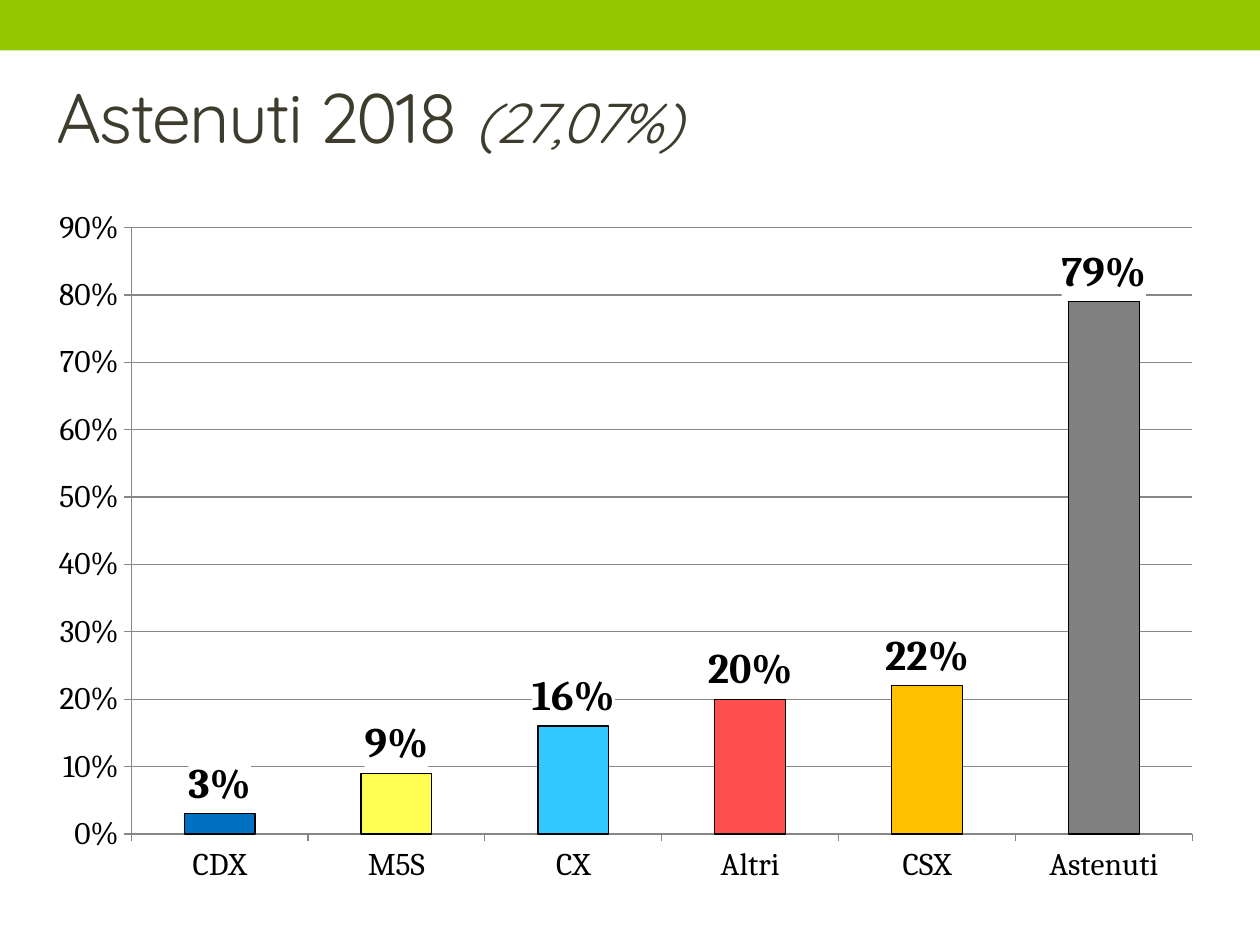
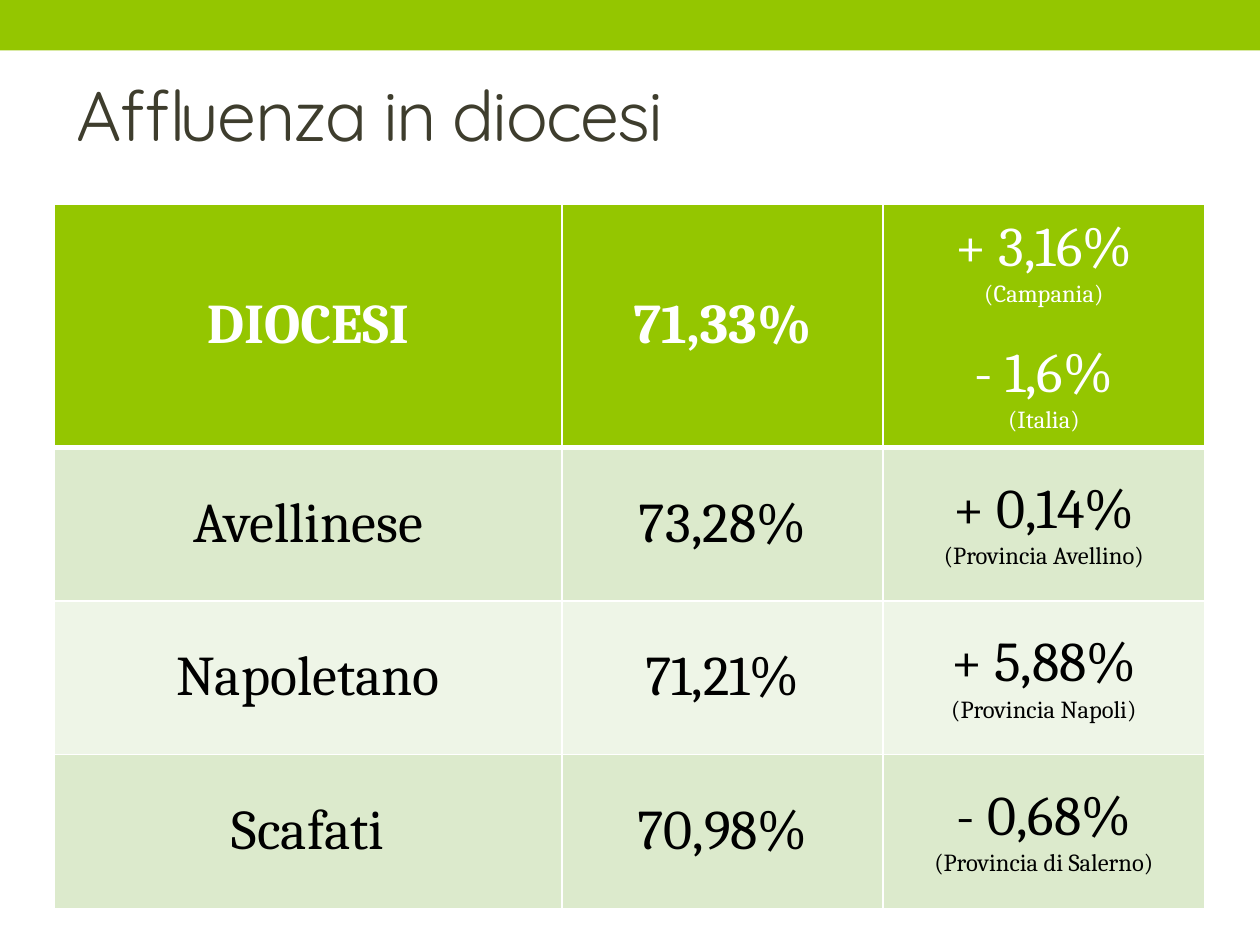
from dataclasses import dataclass

from lxml.etree import SubElement
from pptx import Presentation
from pptx.chart.data import CategoryChartData
from pptx.dml.color import RGBColor
from pptx.enum.chart import XL_CHART_TYPE as ChartType
from pptx.enum.chart import XL_LABEL_POSITION as LabelPosition
from pptx.enum.chart import XL_TICK_MARK as TickMark
from pptx.enum.shapes import MSO_SHAPE as Preset
from pptx.enum.text import MSO_ANCHOR as Anchor
from pptx.enum.text import PP_ALIGN as Align
from pptx.oxml import parse_xml
from pptx.oxml.ns import nsdecls, qn
from pptx.util import Pt

COLOURS = {
    "green": "94C600", "olive": "3E3D2D", "white": "FFFFFF", "black": "000000",
    "grid": "878787", "band_dark": "DCEACC", "band_light": "EEF5E7",
    "CDX": "0070C0", "M5S": "FFFF53", "CX": "2FC9FF",
    "Altri": "FF4F4F", "CSX": "FFC000", "Astenuti": "808080",
}
TITLE_FONT, BODY_FONT = "Quicksand", "Cambria"
SLIDE_WIDTH, SLIDE_HEIGHT, BAND_HEIGHT = 720, 540, 28.8


@dataclass(frozen=True)
class Box:
    left: float
    top: float
    width: float
    height: float

    def lengths(self) -> tuple:
        return Pt(self.left), Pt(self.top), Pt(self.width), Pt(self.height)


@dataclass(frozen=True)
class Change:
    """Difference in turnout against a reference area."""
    amount: str
    area: str


@dataclass(frozen=True)
class Turnout:
    place: str
    share: str
    changes: tuple[Change, ...]
    fill: str
    height: float = 87.84
    ink: str = "black"
    bold: bool = False


SHARES = {"CDX": 0.03, "M5S": 0.09, "CX": 0.16, "Altri": 0.2, "CSX": 0.22, "Astenuti": 0.79}
TURNOUTS = [
    Turnout("DIOCESI", "71,33%", (Change("+ 3,16%", "(Campania)"), Change("- 1,6%", "(Italia)")),
            "green", height=138.96, ink="white", bold=True),
    Turnout("Avellinese", "73,28%", (Change("+ 0,14%", "(Provincia Avellino)"),), "band_dark"),
    Turnout("Napoletano", "71,21%", (Change("+ 5,88%", "(Provincia Napoli)"),), "band_light"),
    Turnout("Scafati", "70,98%", (Change("- 0,68%", "(Provincia di Salerno)"),), "band_dark"),
]
COLUMN_WIDTHS = (290.16, 183.6, 183.6)


def rgb(name: str) -> RGBColor:
    return RGBColor.from_string(COLOURS[name])


def style_font(font, size: float, colour: str = "black", name: str = BODY_FONT,
               bold: bool = False, italic: bool = False) -> None:
    font.size, font.name, font.bold, font.italic = Pt(size), name, bold, italic
    font.color.rgb = rgb(colour)


def write(paragraph, text: str, *, spacing: float = 0, **style) -> None:
    """Append a run; spacing is the tracking in points."""
    run = paragraph.add_run()
    run.text = text
    style_font(run.font, **style)
    if spacing:
        run.font._element.set("spc", str(round(spacing * 100)))


def add_slide(deck, title_box: Box, title: str, detail: str = ""):
    """Start a slide with the green band and the title."""
    slide = deck.slides.add_slide(deck.slide_layouts[6])
    band = slide.shapes.add_shape(Preset.RECTANGLE, *Box(0, 0, SLIDE_WIDTH, BAND_HEIGHT).lengths())
    band.shadow.inherit = False
    band.fill.solid()
    band.fill.fore_color.rgb = rgb("green")
    band.line.fill.background()

    frame = slide.shapes.add_textbox(*title_box.lengths()).text_frame
    frame.word_wrap = True
    frame.vertical_anchor = Anchor.MIDDLE
    heading = {"name": TITLE_FONT, "colour": "olive", "spacing": -1}
    write(frame.paragraphs[0], title, size=40, **heading)
    if detail:
        write(frame.paragraphs[0], detail, size=32, italic=True, **heading)
    return slide


def style_axis(axis) -> None:
    axis.major_tick_mark, axis.minor_tick_mark = TickMark.OUTSIDE, TickMark.NONE
    axis.format.line.color.rgb = rgb("grid")
    axis.format.line.width = Pt(0.75)
    style_font(axis.tick_labels.font, 18)


def add_share_chart(slide, box: Box) -> None:
    data = CategoryChartData(number_format="0%")
    data.categories = list(SHARES)
    data.add_series("Series 1", list(SHARES.values()))
    chart = slide.shapes.add_chart(ChartType.COLUMN_CLUSTERED, *box.lengths(), data).chart
    chart.has_legend = chart.has_title = False
    style_font(chart.font, 18)

    shares_axis = chart.value_axis
    for axis in (chart.category_axis, shares_axis):
        style_axis(axis)
    shares_axis.minimum_scale, shares_axis.maximum_scale, shares_axis.major_unit = 0, 0.9, 0.1
    shares_axis.tick_labels.number_format = "0%"
    shares_axis.tick_labels.number_format_is_linked = False
    shares_axis.has_major_gridlines = True
    shares_axis.major_gridlines.format.line.color.rgb = rgb("grid")
    shares_axis.major_gridlines.format.line.width = Pt(0.75)

    plot = chart.plots[0]
    plot.gap_width, plot.vary_by_categories = 150, False
    columns = plot.series[0]
    for index, party in enumerate(SHARES):
        column = columns.points[index].format
        column.fill.solid()
        column.fill.fore_color.rgb = rgb(party)
        column.line.color.rgb = rgb("black")
        column.line.width = Pt(0.75)

    labels = columns.data_labels
    labels.show_value = True
    labels.number_format, labels.number_format_is_linked = "0%", False
    labels.position = LabelPosition.OUTSIDE_END
    style_font(labels.font, 24, bold=True)
    # A white ground keeps the gridlines from crossing the figures.
    labels._element.find(qn("c:numFmt")).addnext(parse_xml(
        f'<c:spPr {nsdecls("c", "a")}><a:solidFill><a:srgbClr val="{COLOURS["white"]}"/>'
        "</a:solidFill></c:spPr>"))


def set_borders(cell, **widths: float) -> None:
    """Draw white borders; the keys are the sides L, R, T and B, in that order."""
    properties = cell._tc.get_or_add_tcPr()
    for position, (side, width) in enumerate(widths.items()):
        line = SubElement(properties, qn(f"a:ln{side}"), w=str(Pt(width)))
        SubElement(SubElement(line, qn("a:solidFill")), qn("a:srgbClr"), val=COLOURS["white"])
        properties.insert(position, line)


def fill_changes(frame, changes: tuple[Change, ...], ink: str) -> None:
    for index, change in enumerate(changes):
        amount = frame.add_paragraph() if index else frame.paragraphs[0]
        if index:
            amount.space_before = Pt(19)
        write(amount, change.amount, size=32, colour=ink)
        write(frame.add_paragraph(), change.area, size=14, colour=ink)


def add_turnout_table(slide, left: float, top: float) -> None:
    box = Box(left, top, sum(COLUMN_WIDTHS), sum(turnout.height for turnout in TURNOUTS))
    table = slide.shapes.add_table(len(TURNOUTS), len(COLUMN_WIDTHS), *box.lengths()).table
    for column, width in zip(table.columns, COLUMN_WIDTHS):
        column.width = Pt(width)
    for index, (row, turnout) in enumerate(zip(table.rows, TURNOUTS)):
        row.height = Pt(turnout.height)
        place, share, changes = row.cells
        for cell, text in ((place, turnout.place), (share, turnout.share)):
            write(cell.text_frame.paragraphs[0], text, size=32, colour=turnout.ink,
                  bold=turnout.bold)
        fill_changes(changes.text_frame, turnout.changes, turnout.ink)
        for cell in row.cells:
            cell.fill.solid()
            cell.fill.fore_color.rgb = rgb(turnout.fill)
            cell.vertical_anchor = Anchor.MIDDLE
            set_borders(cell, L=1, R=1, T=3 if index == 1 else 1, B=3 if index == 0 else 1)
            for paragraph in cell.text_frame.paragraphs:
                paragraph.alignment = Align.CENTER


def main() -> None:
    deck = Presentation()
    deck.slide_width, deck.slide_height = Pt(SLIDE_WIDTH), Pt(SLIDE_HEIGHT)

    abstention = add_slide(deck, Box(25.2, 20.88, 552.96, 90), "Astenuti 2018 ", "(27,07%)")
    add_share_chart(abstention, Box(20.16, 111.6, 674.64, 401.04))

    diocese = add_slide(deck, Box(36.72, 25.92, 648, 77.76), "Affluenza in diocesi")
    add_turnout_table(diocese, 30.96, 116.64)

    deck.save("out.pptx")


if __name__ == "__main__":
    main()
